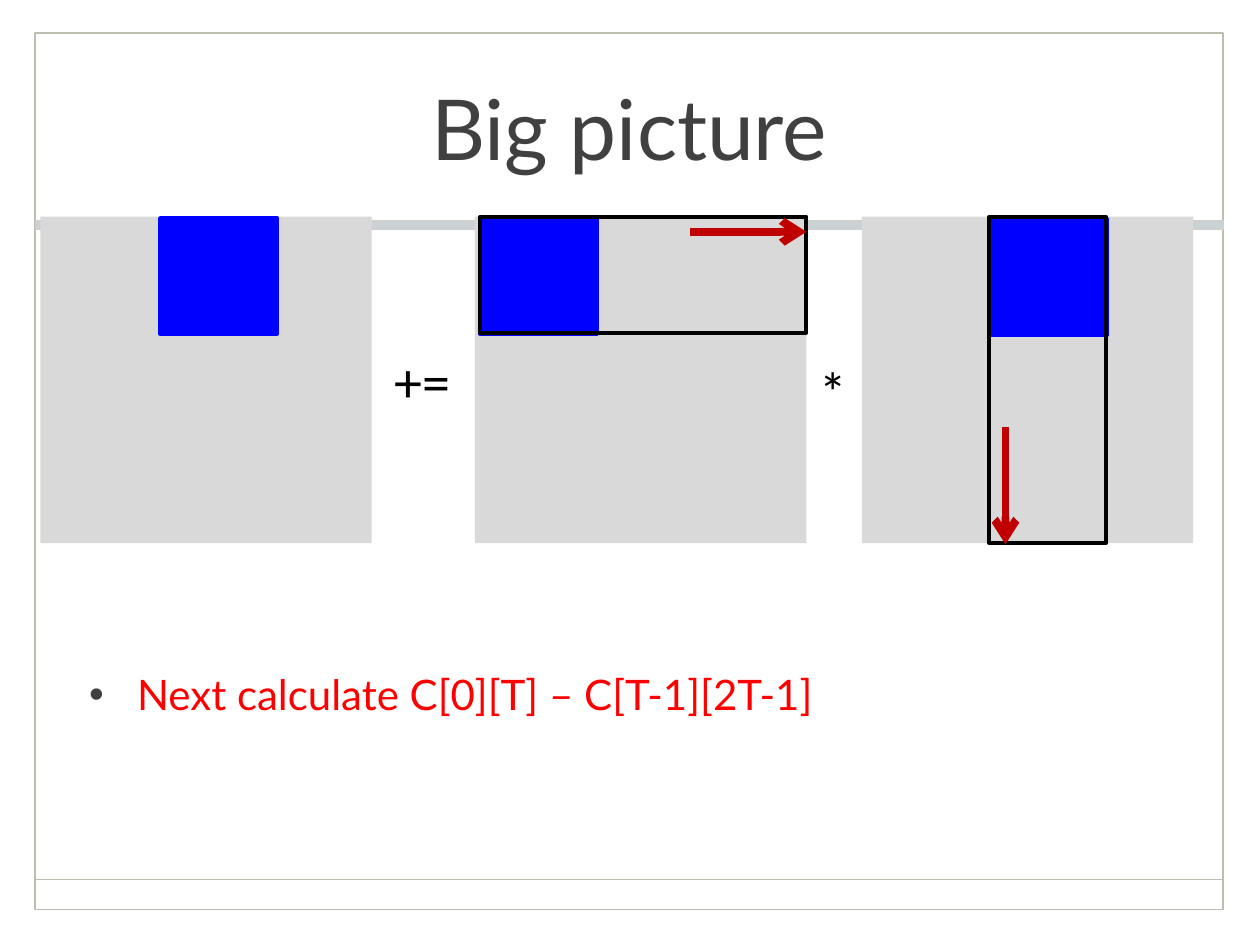
from lxml import etree
from pptx import Presentation
from pptx.dml.color import RGBColor
from pptx.enum.shapes import MSO_CONNECTOR, MSO_SHAPE
from pptx.enum.text import MSO_ANCHOR, PP_ALIGN
from pptx.oxml.ns import qn
from pptx.util import Inches, Pt

RECTANGLE = MSO_SHAPE.RECTANGLE
STRAIGHT = MSO_CONNECTOR.STRAIGHT
MIDDLE, TOP = MSO_ANCHOR.MIDDLE, MSO_ANCHOR.TOP
CENTER, LEFT = PP_ALIGN.CENTER, PP_ALIGN.LEFT

FRAME = RGBColor(0xBE, 0xBD, 0xB2)
BAND = RGBColor(0xCB, 0xD2, 0xD5)
BAND_EDGE = RGBColor(0xD1, 0xD0, 0xC8)
MATRIX = RGBColor(0xD9, 0xD9, 0xD9)
TILE = RGBColor(0x00, 0x00, 0xFF)
ARROW = RGBColor(0xC0, 0x00, 0x00)
BLACK = RGBColor(0x00, 0x00, 0x00)
DARK = RGBColor(0x40, 0x40, 0x40)
RED = RGBColor(0xFF, 0x00, 0x00)

deck = Presentation()
deck.slide_width, deck.slide_height = Inches(10), Inches(7.5)
page = deck.slides.add_slide(deck.slide_layouts[6])


def add_rectangle(left, top, width, height, fill=None, line=None, weight=1):
    shape = page.shapes.add_shape(
        RECTANGLE, Inches(left), Inches(top), Inches(width), Inches(height))
    shape.shadow.inherit = False
    if fill is None:
        shape.fill.background()
    else:
        shape.fill.solid()
        shape.fill.fore_color.rgb = fill
    if line is None:
        shape.line.fill.background()
    else:
        shape.line.color.rgb = line
        shape.line.width = Pt(weight)


def add_line(x1, y1, x2, y2, color, weight):
    line = page.shapes.add_connector(
        STRAIGHT, Inches(x1), Inches(y1), Inches(x2), Inches(y2))
    line.line.color.rgb = color
    line.line.width = Pt(weight)
    etree.SubElement(line._element.spPr, qn("a:effectLst"))
    return line


# Slide frame, footer rule and title band
add_rectangle(0.28, 0.26, 9.43, 6.96, line=FRAME)
add_line(0.28, 6.98, 9.71, 6.98, FRAME, 1)
add_rectangle(0.28, 1.75, 9.43, 0.07, BAND, BAND_EDGE, 0.25)

# Matrices C, A and B, each with its current tile
MATRIX_TOP, MATRIX_WIDTH, MATRIX_HEIGHT = 1.72, 2.63, 2.59
TILE_WIDTH, TILE_HEIGHT = 0.93, 0.92
for matrix_left, tile_left, tile_top in (
        (0.32, 1.27, 1.73), (3.77, 3.81, 1.73), (6.84, 7.86, 1.74)):
    add_rectangle(matrix_left, MATRIX_TOP, MATRIX_WIDTH, MATRIX_HEIGHT, MATRIX)
    add_rectangle(tile_left, tile_top, TILE_WIDTH, TILE_HEIGHT, TILE, TILE, 2)

# Outlined column of B and row of A
add_rectangle(7.85, MATRIX_TOP, TILE_WIDTH, MATRIX_HEIGHT, line=BLACK, weight=2.25)
add_rectangle(3.81, MATRIX_TOP, MATRIX_HEIGHT, TILE_HEIGHT, line=BLACK, weight=2.25)

# Direction of travel along the column and the row
for ends in ((7.98, 3.39, 7.98, 4.32), (5.48, 1.84, 6.4, 1.84)):
    arrow = add_line(*ends, ARROW, 4.5)
    etree.SubElement(arrow.line._get_or_add_ln(), qn("a:tailEnd"), type="arrow")

# Title, operators and bullet
for text, left, top, width, height, size, font, color, align, anchor, wrap in (
        ("Big picture", 0.98, 0.27, 8.03, 1.47, 48, "Lato", DARK, CENTER, MIDDLE, True),
        ("*", 6.4, 2.78, 0.43, 0.64, 32, "Calibri", BLACK, LEFT, TOP, False),
        ("+=", 3.03, 2.7, 0.65, 0.64, 32, "Calibri", BLACK, LEFT, TOP, False),
        ("Next calculate C[0][T] – C[T-1][2T-1]",
         0.61, 5.26, 8.64, 1.21, 24, "Lato", RED, LEFT, TOP, True)):
    box = page.shapes.add_textbox(
        Inches(left), Inches(top), Inches(width), Inches(height))
    box.text_frame.word_wrap = wrap
    box.text_frame.vertical_anchor = anchor
    para = box.text_frame.paragraphs[0]
    para.alignment = align
    span = para.add_run()
    span.text = text
    span.font.size = Pt(size)
    span.font.name = font
    span.font.color.rgb = color

# Bullet mark on the last paragraph
props = para._p.get_or_add_pPr()
props.set("marL", str(Inches(0.38)))
props.set("indent", str(Inches(-0.38)))
bullet_color = etree.SubElement(props, qn("a:buClr"))
etree.SubElement(bullet_color, qn("a:srgbClr"), val=str(DARK))
etree.SubElement(props, qn("a:buFont"), typeface="Arial")
etree.SubElement(props, qn("a:buChar"), char="•")

deck.save("out.pptx")
